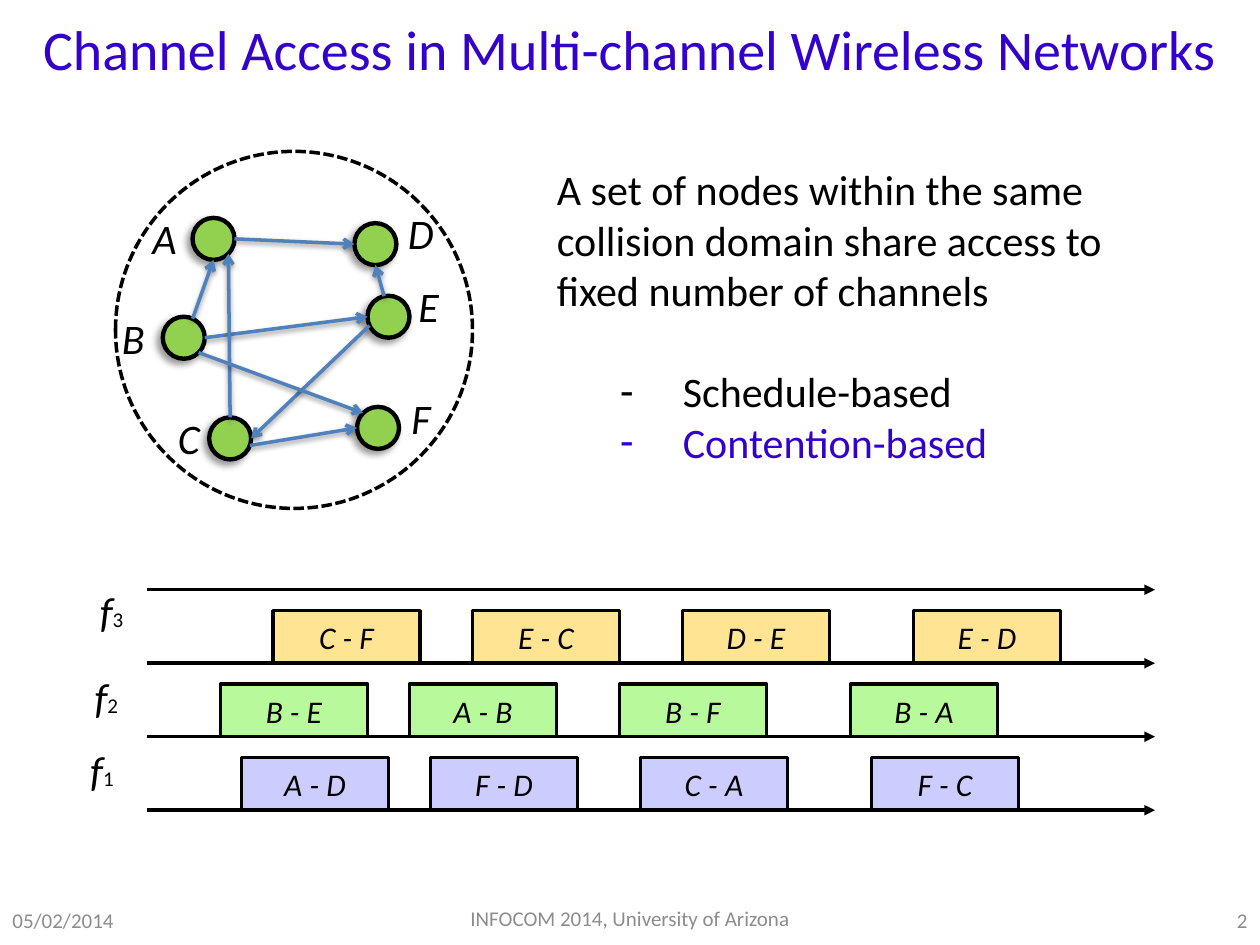
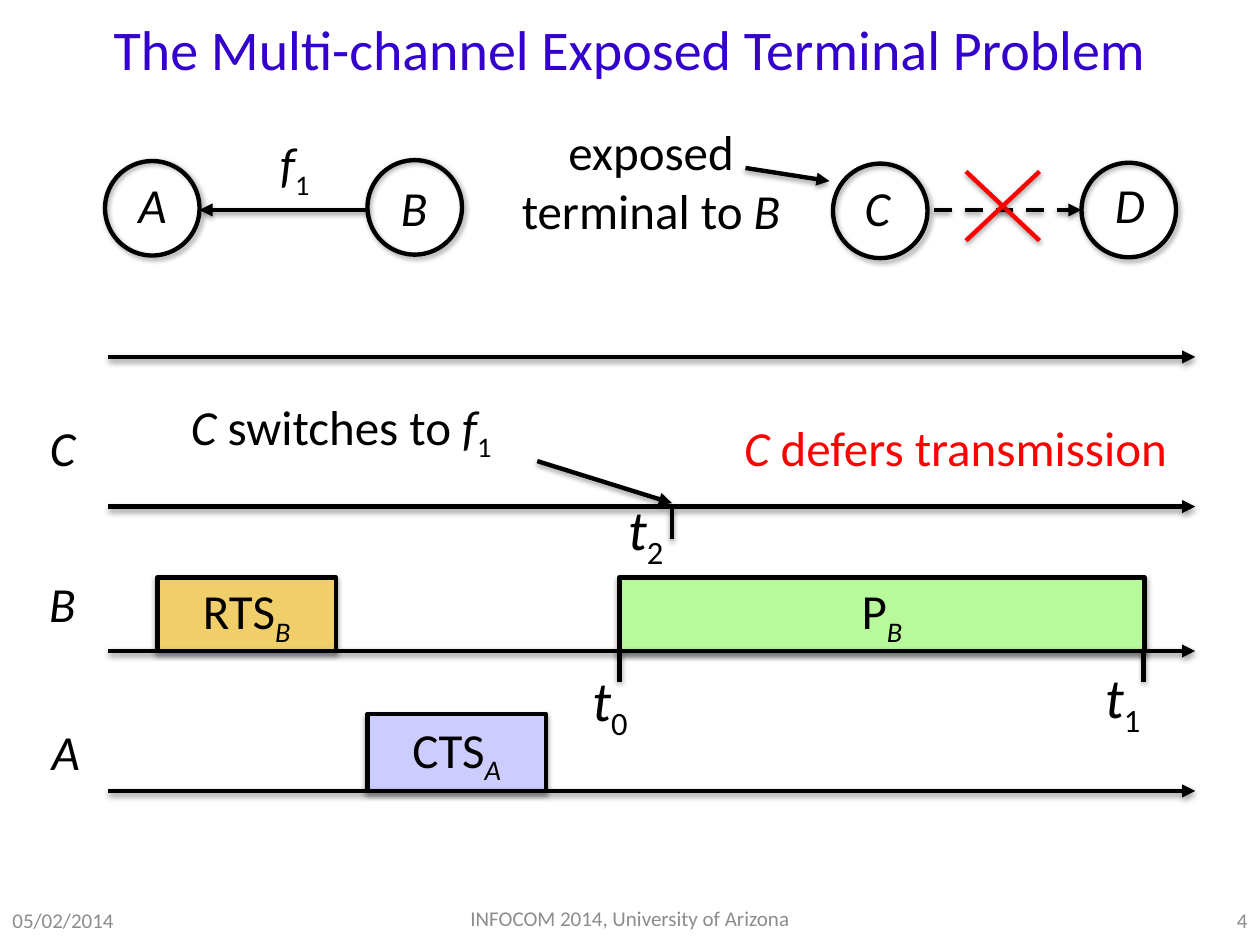
"""Build two slides on channel access in multi-channel wireless networks."""
import math

from lxml import etree
from pptx import Presentation
from pptx import util as u
from pptx.dml.color import RGBColor
from pptx.enum import dml, shapes, text
from pptx.oxml.ns import qn

FONT = "Calibri"
BLACK, WHITE, GRAY, RED = "000000", "FFFFFF", "8C8C8C", "FF0000"
INDIGO, STEEL, LEAF = "3300CC", "4F81BD", "92D050"
LILAC, MINT, SAND, GOLD = "CDCCFE", "B8F99C", "FFE593", "F0CF6B"
LEFT, CENTER, RIGHT = text.PP_ALIGN.LEFT, text.PP_ALIGN.CENTER, text.PP_ALIGN.RIGHT
OVAL, RECT, ROUNDED = (shapes.MSO_SHAPE.OVAL, shapes.MSO_SHAPE.RECTANGLE,
                       shapes.MSO_SHAPE.ROUNDED_RECTANGLE)

# Shadows: opacity %, blur, distance, direction
LINE_SHADOW = (38, 3.1, 1.6, 90)
NODE_SHADOW = (40, 4, 3, 135)
RING_SHADOW = (35, 3.1, 1.8, 50)

FOOTERS = [("05/02/2014", (0, 511, 168, 29), LEFT),
           ("INFOCOM 2014, University of Arizona", (246, 510, 228, 29), CENTER)]
NUMBER_AREA = (552, 511, 168, 29)

ACCESS_TITLE = "Channel Access in Multi-channel Wireless Networks"
ACCESS_TEXT = ("A set of nodes within the same collision domain share access "
               "to fixed number of channels")
ACCESS_KINDS = [("Schedule-based", BLACK, 29), ("Contention-based", INDIGO, 0)]
DOMAIN_AREA = (66, 86.5, 204, 204)
NODE_SIZE = 24
NODES = {"A": ((110, 124.5), (80, 118)), "B": ((93, 181), (62.5, 175)),
         "C": ((119.5, 238.5), (94.5, 232)), "D": ((202.5, 127.5), (226, 115)),
         "E": ((210, 169), (232, 157)), "F": ((204, 232.5), (228, 221))}
# Links: sender, leaving angle, receiver, arriving angle (clockwise from east)
LINKS = [("A", 0, "D", 180), ("B", 0, "E", 180), ("C", 20, "F", 180),
         ("E", 155, "C", 0), ("B", -65, "A", 90), ("C", -90, "A", 45),
         ("B", 45, "F", 225), ("E", -102, "D", 90)]
CHANNELS = [("3", SAND, (47.5, 336), [("C - F", 156), ("E - C", 270), ("D - E", 390), ("E - D", 522)]),
            ("2", MINT, (44.5, 385), [("B - E", 126), ("A - B", 234), ("B - F", 354), ("B - A", 486)]),
            ("1", LILAC, (42, 427), [("A - D", 138), ("F - D", 246), ("C - A", 366), ("F - C", 498)])]
CHANNEL_TOP, CHANNEL_STEP = 337, 42
SLOT_WIDTH, SLOT_HEIGHT = 84, 30

EXPOSED_TITLE = "The Multi-channel Exposed Terminal Problem"
RING_SIZE = 54
TERMINALS = [("A", (60, 92), (72, 96)), ("B", (210, 91.5), (222, 98)),
             ("C", (476, 93.5), (487, 98)), ("D", (618, 93), (630, 96))]
TIMELINES = [204, 289.5, 372, 452]
ROW_NAMES = [("C", (21.5, 235)), ("B", (21, 324)), ("A", (22.5, 409))]
PACKETS = [("RTS", "B", GOLD, (90, 330, 102, 42)), ("CTS", "A", LILAC, (210, 408, 102, 44)),
           ("P", "B", MINT, (354, 330, 300, 42))]
TICKS = [("0", (354, 371.5), (324, 376.5, 49, 46)),
         ("1", (653.5, 371.5), (617, 375, 49, 46)),
         ("2", (384, 290), (342.5, 279, 53, 55))]
TICK_HEIGHT = 18
POINTERS = [((210, 120), (114, 120), None), ((426, 96), (474, 103.5), None),
            ((307, 263.5), (384, 287.5), None),
            ((534, 120), (618, 120), dml.MSO_LINE.DASH)]
CROSS = [((552, 98), (594, 137.5)), ((594, 98), (552, 137.5))]
NOTES = [([[("exposed", "")], [("terminal to ", ""), ("B", "i")]], BLACK, (288, 66, 168, 75)),
         ([[("f", "i"), ("1", "s")]], BLACK, (138, 73, 61, 41)),
         ([[("C ", "i"), ("switches to ", ""), ("f", "i"), ("1", "s")]], BLACK, (66, 223, 258, 41)),
         ([[("C ", "i"), ("defers transmission", "")]], RED, (402, 235, 288, 41))]


def color(value):
    return RGBColor.from_string(value)


def points(values):
    return [u.Pt(value) for value in values]


def place(box, area):
    box.left, box.top, box.width, box.height = points(area)


def style(span, size, ink):
    span.font.name, span.font.size = FONT, u.Pt(size)
    span.font.color.rgb = color(ink)


def write(box, lines, size, ink=BLACK, align=CENTER, anchor=text.MSO_ANCHOR.MIDDLE, wrap=True):
    """Fill a box with paragraphs of (words, mark); i is italic, s subscript, a number a size."""
    frame = box.text_frame
    frame.word_wrap, frame.vertical_anchor = wrap, anchor
    for index, line in enumerate(lines):
        para = frame.add_paragraph() if index else frame.paragraphs[0]
        para.alignment = align
        for words, mark in line:
            span = para.add_run()
            span.text = words
            style(span, int(mark) if mark.isdigit() else size, ink)
            span.font.italic = "i" in mark
            if "s" in mark:
                span.font._element.set("baseline", "-25000")


def shade(shape, shadow):
    """Replace the theme shadow by the given one, or by none."""
    effects = etree.SubElement(shape._element.spPr, qn("a:effectLst"))
    if shadow:
        opacity, blur, distance, direction = shadow
        outer = etree.SubElement(effects, qn("a:outerShdw"), blurRad=str(u.Pt(blur)),
                                 dist=str(u.Pt(distance)), dir=str(direction * 60000),
                                 algn="ctr", rotWithShape="0")
        black = etree.SubElement(outer, qn("a:srgbClr"), val=BLACK)
        etree.SubElement(black, qn("a:alpha"), val=str(opacity * 1000))


def add_label(page, area, lines, size, ink=BLACK, align=CENTER,
              anchor=text.MSO_ANCHOR.TOP, wrap=True):
    box = page.shapes.add_textbox(*points(area))
    write(box, lines, size, ink, align, anchor, wrap)


def add_letter(page, letter, corner, size):
    add_label(page, (*corner, size + 8, size + 12), [[(letter, "i")]], size, align=LEFT, wrap=False)


def add_shape(page, kind, area, fill=None, width=2, shadow=None, dash=None):
    shape = page.shapes.add_shape(kind, *points(area))
    if fill:
        shape.fill.solid()
        shape.fill.fore_color.rgb = color(fill)
    else:
        shape.fill.background()
    if width:
        shape.line.color.rgb, shape.line.width = color(BLACK), u.Pt(width)
    else:
        shape.line.fill.background()
    if dash:
        shape.line.dash_style = dash
    shade(shape, shadow)
    return shape


def add_line(page, start, end, ink=BLACK, width=2.5, tip="triangle", shadow=LINE_SHADOW, dash=None):
    line = page.shapes.add_connector(shapes.MSO_CONNECTOR.STRAIGHT, *points((*start, *end)))
    line.line.color.rgb, line.line.width = color(ink), u.Pt(width)
    if dash:
        line.line.dash_style = dash
    if tip:
        etree.SubElement(line.line._get_or_add_ln(), qn("a:tailEnd"), type=tip)
    shade(line, shadow)


def add_page(deck, layout, title, number):
    """Add a slide with the shared title style and footers."""
    page = deck.slides.add_slide(deck.slide_layouts[layout])
    heading = page.shapes.title
    place(heading, (0, 1.5, 720, 52.5))
    heading.text_frame.auto_size = text.MSO_AUTO_SIZE.NONE
    write(heading, [[(title, "")]], 32, INDIGO)
    for words, area, align in [*FOOTERS, (number, NUMBER_AREA, RIGHT)]:
        add_label(page, area, [[(words, "")]], 12, GRAY, align, text.MSO_ANCHOR.MIDDLE)
    return page


def fill_body(body):
    place(body, (311, 90, 366.5, 201))
    frame = body.text_frame
    frame.auto_size = text.MSO_AUTO_SIZE.NONE
    frame.text = "\n".join([ACCESS_TEXT, *(kind for kind, _, _ in ACCESS_KINDS)])
    looks = [(BLACK, 0, 0, 0), *((ink, gap, 72, -36) for _, ink, gap in ACCESS_KINDS)]
    for para, (ink, gap, margin, indent) in zip(frame.paragraphs, looks):
        para.level = 1 if margin else 0
        para.space_before = u.Pt(gap)
        style(para.runs[0], 24, ink)
        layout = para._p.get_or_add_pPr()
        layout.set("marL", str(u.Pt(margin)))
        layout.set("indent", str(u.Pt(indent)))
        if margin:
            etree.SubElement(layout, qn("a:buChar"), char="-")
        else:
            etree.SubElement(layout, qn("a:buNone"))


def rim(node, angle):
    """Return the point on a node's rim at an angle."""
    radius, turn = NODE_SIZE / 2, math.radians(angle)
    x, y = NODES[node][0]
    return x + radius * (1 + math.cos(turn)), y + radius * (1 + math.sin(turn))


def build_access(deck):
    page = add_page(deck, 1, ACCESS_TITLE, "2")
    fill_body(page.placeholders[1])
    add_shape(page, OVAL, DOMAIN_AREA, dash=dml.MSO_LINE.SQUARE_DOT)
    for name, (corner, label) in NODES.items():
        add_shape(page, OVAL, (*corner, NODE_SIZE, NODE_SIZE), LEAF, 2.5, NODE_SHADOW)
        add_letter(page, name, label, 24)
    for sender, leaving, receiver, arriving in LINKS:
        add_line(page, rim(sender, leaving), rim(receiver, arriving), STEEL, 2, "arrow")
    for row in range(len(CHANNELS) + 1):
        y = CHANNEL_TOP + row * CHANNEL_STEP
        add_line(page, (84, y), (660, y), width=2, shadow=None)
    for row, (number, fill, label, slots) in enumerate(CHANNELS, 1):
        top = CHANNEL_TOP + row * CHANNEL_STEP - SLOT_HEIGHT
        for words, left in slots:
            slot = add_shape(page, RECT, (left, top, SLOT_WIDTH, SLOT_HEIGHT), fill)
            write(slot, [[(words, "i")]], 18, wrap=False)
        tag = add_shape(page, ROUNDED, (*label, 32.5, 26), WHITE, width=0)
        write(tag, [[("f", "i"), (number, "12")]], 24)


def build_exposed(deck):
    page = add_page(deck, 5, EXPOSED_TITLE, "4")
    for name, subscript, fill, area in PACKETS:
        packet = add_shape(page, RECT, area, fill, 2.5, LINE_SHADOW)
        write(packet, [[(name, ""), (subscript, "is")]], 28)
    for y in TIMELINES:
        add_line(page, (62, y), (683, y))
    for name, corner in ROW_NAMES:
        add_letter(page, name, corner, 28)
    for number, (x, y), area in TICKS:
        add_line(page, (x, y), (x, y + TICK_HEIGHT), tip=None)
        add_label(page, area, [[("t", "i"), (number, "s")]], 32)
    for start, end, dash in POINTERS:
        add_line(page, start, end, dash=dash)
    for start, end in CROSS:
        add_line(page, start, end, RED, tip=None)
    for lines, ink, area in NOTES:
        add_label(page, area, lines, 28, ink)
    for name, corner, label in TERMINALS:
        add_shape(page, OVAL, (*corner, RING_SIZE, RING_SIZE), None, 2.5, RING_SHADOW)
        add_letter(page, name, label, 28)


def main():
    deck = Presentation()
    deck.slide_width, deck.slide_height = points((720, 540))
    build_access(deck)
    build_exposed(deck)
    deck.save("out.pptx")


if __name__ == "__main__":
    main()
